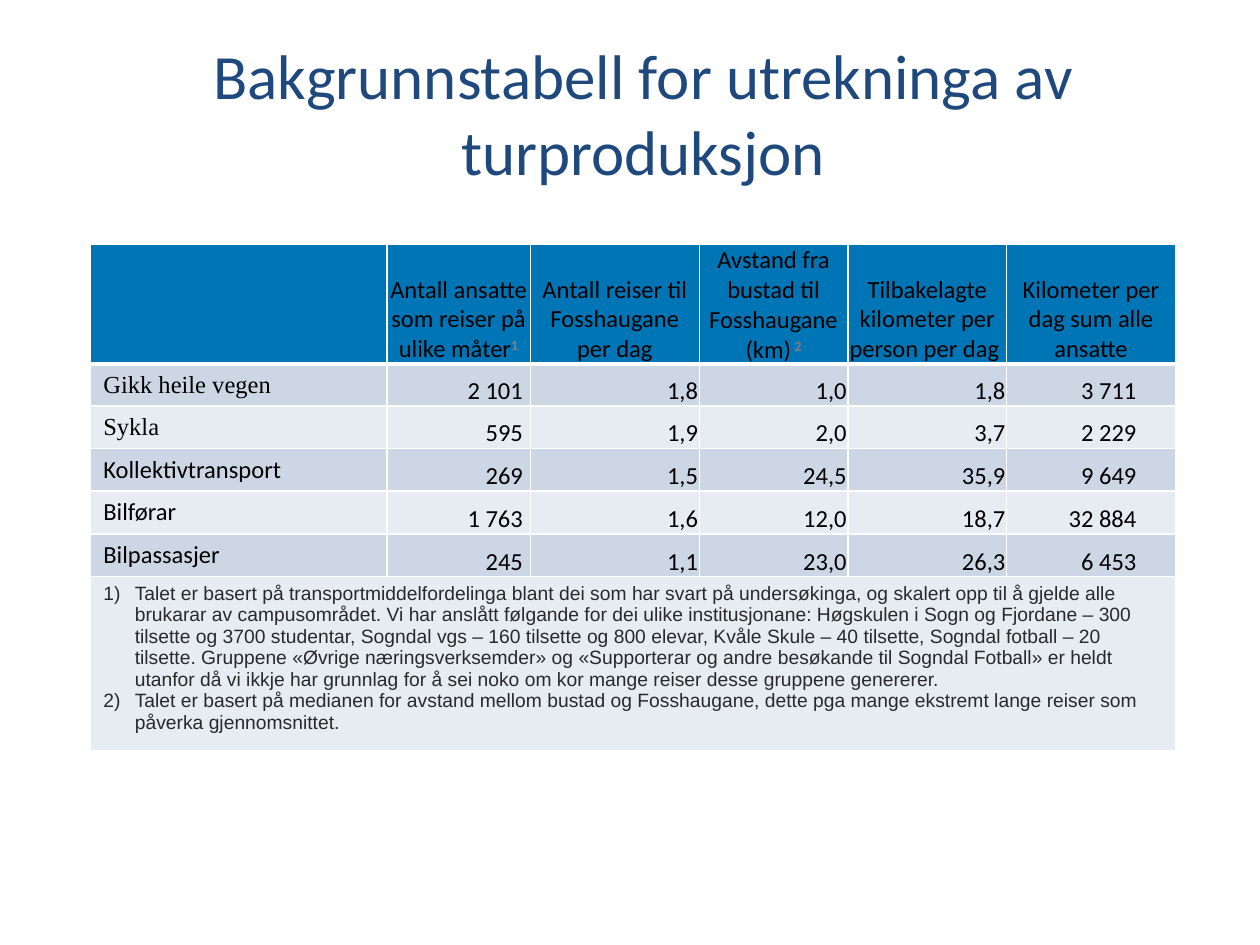
"""Build the background table slide for the trip production estimate."""
from lxml import etree
from pptx import Presentation
from pptx.dml.color import RGBColor
from pptx.enum.text import MSO_ANCHOR, PP_ALIGN
from pptx.oxml.ns import qn
from pptx.util import Inches, Pt

CENTER, LEFT, RIGHT = PP_ALIGN.CENTER, PP_ALIGN.LEFT, PP_ALIGN.RIGHT
TOP, MIDDLE, BOTTOM = MSO_ANCHOR.TOP, MSO_ANCHOR.MIDDLE, MSO_ANCHOR.BOTTOM

COLORS = {
    "title": "1F497D", "header": "0075B6", "dark_band": "CCD6E5",
    "light_band": "E7ECF3", "border": "FFFFFF", "text": "000000",
    "reference": "808080", "note": "292929",
}
TITLE = "Bakgrunnstabell for utrekninga av turproduksjon"
HEADERS = [
    ("", ""),
    ("Antall ansatte som reiser på ulike måter", "1"),
    ("Antall reiser til Fosshaugane per dag", ""),
    ("Avstand fra bustad til Fosshaugane (km)", " 2"),
    ("Tilbakelagte kilometer per person per dag ", ""),
    ("Kilometer per dag sum alle ansatte", ""),
]
ROWS = [
    ("Gikk heile vegen", "2 101", "1,8", "1,0", "1,8", "3 711"),
    ("Sykla", "595", "1,9", "2,0", "3,7", "2 229"),
    ("Kollektivtransport", "269", "1,5", "24,5", "35,9", "9 649"),
    ("Bilførar", "1 763", "1,6", "12,0", "18,7", "32 884"),
    ("Bilpassasjer", "245", "1,1", "23,0", "26,3", "6 453"),
]
NOTES = [
    "Talet er basert på transportmiddelfordelinga blant dei som har svart på "
    "undersøkinga, og skalert opp til å gjelde alle brukarar av campusområdet. "
    "Vi har anslått følgande for dei ulike institusjonane: Høgskulen i Sogn og "
    "Fjordane – 300 tilsette og 3700 studentar, Sogndal vgs – 160 tilsette og "
    "800 elevar, Kvåle Skule – 40 tilsette, Sogndal fotball – 20 tilsette. "
    "Gruppene «Øvrige næringsverksemder» og «Supporterar og andre besøkande til "
    "Sogndal Fotball» er heldt utanfor då vi ikkje har grunnlag for å sei noko "
    "om kor mange reiser desse gruppene genererer.",
    "Talet er basert på medianen for avstand mellom bustad og Fosshaugane, dette "
    "pga mange ekstremt lange reiser som påverka gjennomsnittet.",
]
SERIF_LABELS = ("Gikk heile vegen", "Sykla")
COLUMN_WIDTHS = [2.35, 1.14, 1.34, 1.18, 1.26, 1.34]
ROW_HEIGHTS = [0.95, 0.31, 0.32, 0.34, 0.34, 0.34, 1.29]
RIGHT_MARGINS = {1: 0.06, 5: 0.31}
CELL_MARGINS = (0.01, 0.01, 0.01, 0)
LABEL_MARGINS = (0.1, 0.05, 0.1, 0.05)


def style_font(font, size, color, name="Calibri", bold=False):
    font.size, font.name, font.bold = Pt(size), name, bold
    font.color.rgb = RGBColor.from_string(COLORS[color])


def set_margins(frame, margins):
    (frame.margin_left, frame.margin_top,
     frame.margin_right, frame.margin_bottom) = map(Inches, margins)


def style_cell(cell, fill, margins, anchor, edges):
    properties = cell._tc.get_or_add_tcPr()
    for side, width in edges.items():
        line = etree.SubElement(properties, qn(f"a:ln{side}"), w=str(Pt(width)))
        solid = etree.SubElement(line, qn("a:solidFill"))
        etree.SubElement(solid, qn("a:srgbClr"), val=COLORS["border"])
    cell.fill.solid()
    cell.fill.fore_color.rgb = RGBColor.from_string(COLORS[fill])
    set_margins(cell, margins)
    cell.vertical_anchor = anchor


def write_cell(cell, text, alignment, name="Calibri"):
    paragraph = cell.text_frame.paragraphs[0]
    paragraph.text, paragraph.alignment = text, alignment
    style_font(paragraph.font, 14, "text", name)
    for run in paragraph.runs:
        style_font(run.font, 14, "text", name)
    return paragraph


def add_title(slide):
    box = slide.shapes.add_textbox(Inches(0.59), Inches(0.21), Inches(9.03), Inches(0.77))
    frame = box.text_frame
    frame.word_wrap, frame.vertical_anchor = True, TOP
    set_margins(frame, (0.1, 0.08, 0.1, 0.05))
    frame.text = TITLE
    paragraph = frame.paragraphs[0]
    paragraph.alignment = CENTER
    style_font(paragraph.runs[0].font, 36, "title")


def fill_header(table):
    for column, (text, reference) in enumerate(HEADERS):
        paragraph = write_cell(table.cell(0, column), text, CENTER)
        if reference:
            run = paragraph.add_run()
            run.text = reference
            style_font(run.font, 14, "reference", bold=True)
            run._r.get_or_add_rPr().set("baseline", "30000")


def fill_body(table):
    for row, values in enumerate(ROWS, 1):
        name = "Times New Roman" if values[0] in SERIF_LABELS else "Calibri"
        write_cell(table.cell(row, 0), values[0], LEFT, name)
        for column, value in enumerate(values[1:], 1):
            write_cell(table.cell(row, column), value, RIGHT)


def fill_notes(table):
    last_row = len(ROW_HEIGHTS) - 1
    cell = table.cell(last_row, 0)
    cell.merge(table.cell(last_row, len(COLUMN_WIDTHS) - 1))
    frame = cell.text_frame
    frame.text = "\n".join(NOTES)
    for paragraph in frame.paragraphs:
        properties = paragraph._p.get_or_add_pPr()
        properties.set("marL", str(Inches(0.25)))
        properties.set("indent", str(-Inches(0.25)))
        etree.SubElement(properties, qn("a:buFont"), typeface="+mj-lt")
        etree.SubElement(properties, qn("a:buAutoNum"), type="arabicParenR")
        style_font(paragraph.runs[0].font, 11, "note", "Arial")


def add_trip_table(slide):
    frame = slide.shapes.add_table(
        len(ROW_HEIGHTS), len(COLUMN_WIDTHS), Inches(0.72), Inches(1.94),
        Inches(sum(COLUMN_WIDTHS)), Inches(sum(ROW_HEIGHTS)))
    table = frame.table
    for column, width in zip(table.columns, COLUMN_WIDTHS):
        column.width = Inches(width)
    for index, (row, height) in enumerate(zip(table.rows, ROW_HEIGHTS)):
        row.height = Inches(height)
        fill = "header" if index == 0 else "dark_band" if index % 2 else "light_band"
        edges = {"L": 1, "R": 1, "T": 3 if index == 1 else 1, "B": 1 if index else 3}
        for column, cell in enumerate(row.cells):
            margins, anchor = CELL_MARGINS, BOTTOM
            if index > len(ROWS):
                margins, anchor = LABEL_MARGINS, TOP
            elif index and column == 0:
                margins, anchor = LABEL_MARGINS, MIDDLE
            elif index:
                margins = (0.01, 0.01, RIGHT_MARGINS.get(column, 0.01), 0)
            style_cell(cell, fill, margins, anchor, edges)
    fill_header(table)
    fill_body(table)
    fill_notes(table)


def main():
    presentation = Presentation()
    presentation.slide_width, presentation.slide_height = Inches(10), Inches(7.5)
    slide = presentation.slides.add_slide(presentation.slide_layouts[6])
    add_title(slide)
    add_trip_table(slide)
    presentation.save("out.pptx")


if __name__ == "__main__":
    main()
